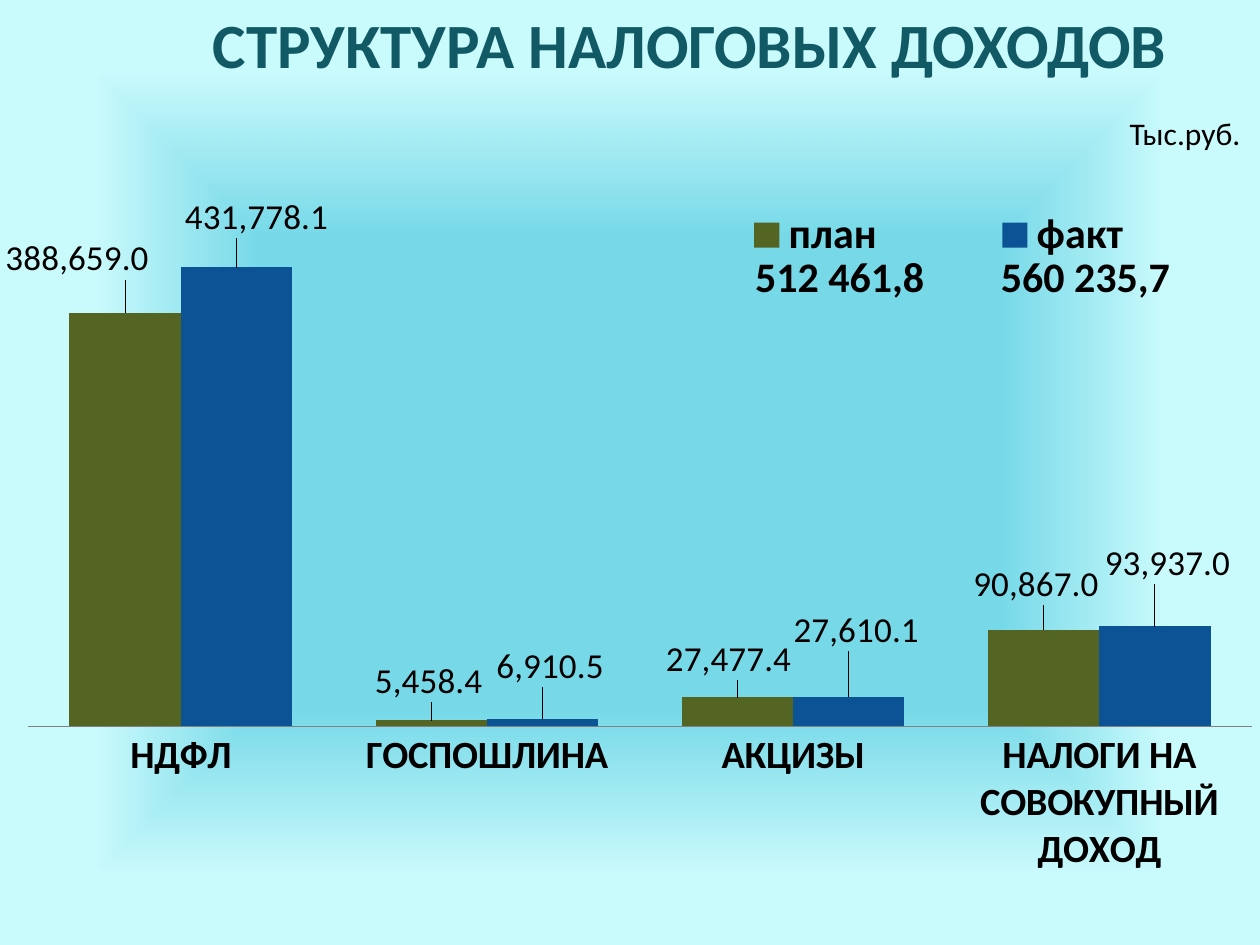
from dataclasses import dataclass

from lxml import etree
from pptx import Presentation
from pptx.chart.data import CategoryChartData
from pptx.dml.color import RGBColor
from pptx.enum.chart import XL_CHART_TYPE, XL_LABEL_POSITION, XL_LEGEND_POSITION, XL_TICK_MARK
from pptx.enum.text import MSO_ANCHOR, PP_ALIGN
from pptx.oxml.ns import qn
from pptx.util import Inches, Pt

COLUMNS = XL_CHART_TYPE.COLUMN_CLUSTERED
OUTSIDE_END = XL_LABEL_POSITION.OUTSIDE_END
LEGEND_BOTTOM = XL_LEGEND_POSITION.BOTTOM
NO_TICKS = XL_TICK_MARK.NONE
CENTER = PP_ALIGN.CENTER
MIDDLE, BOTTOM = MSO_ANCHOR.MIDDLE, MSO_ANCHOR.BOTTOM


@dataclass(frozen=True)
class Theme:
    font: str = "Calibri"
    chart_font: str = "Cambria"
    text: str = "000000"
    heading: str = "115964"
    plan: str = "546422"
    fact: str = "0B5394"
    axis: str = "808080"
    glow: str = "77D9E8"
    edge: str = "C9FAFC"
    title_size: int = 36
    total_size: int = 24
    category_size: int = 22
    value_size: int = 20
    unit_size: int = 18


THEME = Theme()
NUMBER_FORMAT = "#,##0.0"
CHART_WIDTH, CHART_HEIGHT = 10, 6.33
CATEGORIES = ["НДФЛ", "ГОСПОШЛИНА", "АКЦИЗЫ", "НАЛОГИ НА СОВОКУПНЫЙ ДОХОД"]
# Name, colour, values, and label shifts in inches from the bar's end
SERIES = [
    ("план", THEME.plan, [388659, 5458.4, 27477.4, 90867],
     [(-0.38, -0.22), (-0.02, -0.1), (-0.07, -0.09), (-0.06, -0.15)]),
    ("факт", THEME.fact, [431778.1, 6910.5, 27610.1, 93937],
     [(0.16, -0.19), (0.06, -0.21), (0.06, -0.32), (0.1, -0.29)]),
]


def style_font(font, size, color=THEME.text, bold=False, name=THEME.font):
    font.name, font.size, font.bold = name, Pt(size), bold
    font.color.rgb = RGBColor.from_string(color)


def chart_element(tag, **attributes):
    return etree.Element(qn(f"c:{tag}"), attributes)


def manual_layout(**settings):
    layout = chart_element("layout")
    manual = etree.SubElement(layout, qn("c:manualLayout"))
    for tag, value in settings.items():
        manual.append(chart_element(tag, val=str(value)))
    return layout


def set_layout(owner, layout, after):
    """Replace the layout of a chart part, placing it after the given child."""
    for old in owner.findall(qn("c:layout")):
        owner.remove(old)
    previous = owner.find(qn(f"c:{after}")) if after else None
    if previous is None:
        owner.insert(0, layout)
    else:
        previous.addnext(layout)


def fill_background(slide):
    fill = slide.background.fill
    fill.gradient()
    stops = [(0.5, THEME.glow), (0.85, THEME.edge)]
    for stop, (position, color) in zip(fill.gradient_stops, stops):
        stop.position = position
        stop.color.rgb = RGBColor.from_string(color)
    gradient = next(slide.element.iter(qn("a:gradFill")))
    gradient.remove(gradient.find(qn("a:lin")))
    shape_path = etree.SubElement(gradient, qn("a:path"), {"path": "shape"})
    etree.SubElement(shape_path, qn("a:fillToRect"),
                     {side: "50000" for side in "ltrb"})


def write_title(slide, text):
    title = slide.shapes.title
    title.left, title.top = Inches(0.83), Inches(0.04)
    title.width, title.height = Inches(9.29), Inches(0.59)
    frame = title.text_frame
    frame.text = text
    frame.word_wrap = True
    frame.vertical_anchor = BOTTOM
    frame.margin_left = frame.margin_right = frame.margin_bottom = 0
    frame.margin_top = Inches(0.05)
    heading = frame.paragraphs[0]
    heading.alignment, heading.line_spacing = CENTER, 0.7
    style_font(heading.font, THEME.title_size, THEME.heading, bold=True)


def add_note(slide, text, left, top, width, height, size, bold=False):
    box = slide.shapes.add_textbox(*map(Inches, (left, top, width, height)))
    frame = box.text_frame
    frame.text = text
    frame.word_wrap = True
    frame.vertical_anchor = MIDDLE
    note = frame.paragraphs[0]
    note.alignment = CENTER
    style_font(note.font, size, bold=bold)


def place_labels(series, shifts):
    for index, (dx, dy) in enumerate(shifts):
        label = series.points[index].data_label
        style_font(label.font, THEME.value_size)
        label.position = OUTSIDE_END
        element = series.data_labels._element.findall(qn("c:dLbl"))[index]
        set_layout(element, manual_layout(x=round(dx / CHART_WIDTH, 3),
                                          y=round(dy / CHART_HEIGHT, 3)), "idx")
        element.find(qn("c:layout")).addnext(
            chart_element("numFmt", formatCode=NUMBER_FORMAT, sourceLinked="0"))
    labels = series.data_labels
    labels.show_value = True
    labels.number_format, labels.number_format_is_linked = NUMBER_FORMAT, False
    style_font(labels.font, THEME.value_size)


def format_axes(chart):
    values = chart.value_axis
    values.visible = False
    values.has_major_gridlines = False
    values.minimum_scale, values.maximum_scale = 0, 500000
    categories = chart.category_axis
    categories.major_tick_mark = categories.minor_tick_mark = NO_TICKS
    categories.format.line.color.rgb = RGBColor.from_string(THEME.axis)
    categories.format.line.width = Pt(0.75)
    style_font(categories.tick_labels.font, THEME.category_size, bold=True)


def format_legend(chart):
    chart.has_legend = True
    legend = chart.legend
    legend.position = LEGEND_BOTTOM
    legend.include_in_layout = False
    style_font(legend.font, THEME.total_size, bold=True)
    set_layout(legend._element, manual_layout(
        xMode="edge", yMode="edge", x=0.51, y=0.07, w=0.47, h=0.08), "legendPos")


def add_tax_chart(slide):
    data = CategoryChartData(number_format=NUMBER_FORMAT)
    data.categories = CATEGORIES
    for name, _, values, _ in SERIES:
        data.add_series(name, values)
    chart = slide.shapes.add_chart(
        COLUMNS, 0, Inches(1.17), Inches(CHART_WIDTH), Inches(CHART_HEIGHT), data).chart
    chart.has_title = False
    style_font(chart.font, THEME.unit_size, name=THEME.chart_font)
    format_axes(chart)
    format_legend(chart)
    plot = chart.plots[0]
    plot.gap_width, plot.overlap, plot.vary_by_categories = 75, 0, False
    for series, (_, color, _, shifts) in zip(plot.series, SERIES):
        series.format.fill.solid()
        series.format.fill.fore_color.rgb = RGBColor.from_string(color)
        place_labels(series, shifts)
    plot_area = next(chart._chartSpace.iter(qn("c:plotArea")))
    set_layout(plot_area, manual_layout(
        layoutTarget="inner", xMode="edge", yMode="edge",
        x=0.022, y=0.059, w=0.972, h=0.667), None)


def main():
    presentation = Presentation()
    presentation.slide_width, presentation.slide_height = Inches(10), Inches(7.5)
    slide = presentation.slides.add_slide(presentation.slide_layouts[5])
    fill_background(slide)
    write_title(slide, "СТРУКТУРА НАЛОГОВЫХ ДОХОДОВ")
    add_tax_chart(slide)
    for total, left in (("512 461,8", 5.78), ("560 235,7", 7.73)):
        add_note(slide, total, left, 2.03, 1.77, 0.31, THEME.total_size, bold=True)
    add_note(slide, "Тыс.руб.", 8.79, 0.94, 1.23, 0.23, THEME.unit_size)
    presentation.save("out.pptx")


if __name__ == "__main__":
    main()
